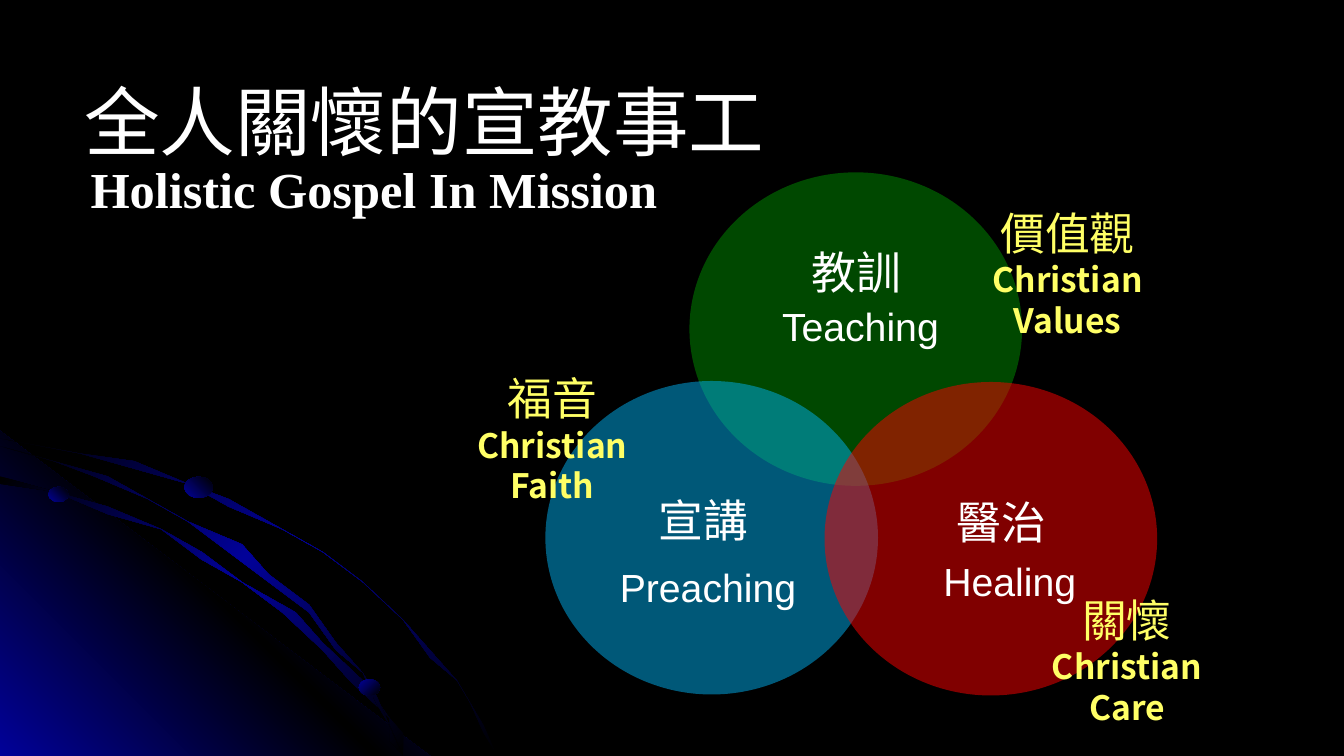
from lxml.etree import SubElement
from pptx import Presentation
from pptx.dml.color import RGBColor
from pptx.enum.shapes import MSO_SHAPE as SHAPE
from pptx.enum.text import MSO_ANCHOR as ANCHOR, MSO_AUTO_SIZE as FIT, PP_ALIGN as ALIGN
from pptx.oxml.ns import qn
from pptx.util import Inches, Pt

W, H = Inches(13.333), Inches(7.5)
CJK = "Noto Sans CJK SC"
BLACK, NAVY, WHITE, YELLOW = "000000", "010199", "FFFFFF", "FFFF66"
TITLE = dict(name=CJK, size=Pt(54), bold=False)
SUBTITLE = dict(name="Times New Roman", size=Pt(36), bold=True)
CHINESE = dict(name=CJK, size=Pt(32))
ENGLISH = dict(name="Arial", size=Pt(28))
VALUE = dict(name=CJK, size=Pt(24), bold=True)

CORNER = [(0, 57), (0, 99.9), (32.2, 99.9)]
ORBITS = [
    [(0, 58), (5.7, 59.6), (9.8, 61.2), (13.7, 63.6), (17.4, 66.3), (20.9, 69.5), (24.2, 73.1),
     (27.2, 77.1), (30, 81.5), (32.5, 86.4), (34, 89.7), (35.2, 93.1), (36.2, 96.4), (37.2, 99.9)],
    [(0, 63.3), (4.1, 65.1), (7.9, 67.3), (11.7, 70.1), (15.2, 73.2), (18.5, 76.8),
     (21.5, 80.8), (24.2, 85.3), (26.6, 90.1), (28.7, 94.9), (29.6, 97.3), (30.3, 99.9)],
    [(0, 58.9), (3.8, 60.7), (7.6, 63.1), (11.2, 65.7), (14.3, 68.8), (17.5, 72.4), (20.4, 76.4),
     (23, 80.4), (25.4, 85.2), (26.9, 88.7), (28.2, 92.4), (29.3, 96), (30.3, 99.9)],
]
PLANETS = [((3.6, 64.4, 1.5, 2), 315), ((26.7, 89.87, 1.58, 2.13), 45),
           ((13.73, 63.07, 2.1, 2.8), 315)]
TOPICS = [
    dict(circle=(51.3, 22.8), color="009900", alpha=47,
         value=("價值觀", "Christian Values"), value_at=(72.38, 30.53),
         chinese="教訓", chinese_at=(59.55, 31.73),
         english="Teaching", english_box=(57.45, 39.33, 13.35, 7.6)),
    dict(circle=(40.58, 50.4), color="00B0F0", alpha=50,
         value=("福音", "Christian Faith"), value_at=(34.05, 52.4),
         chinese="宣講", chinese_at=(48.15, 64.53),
         english="Preaching", english_box=(45.38, 73.87, 14.78, 7.6)),
    dict(circle=(61.35, 50.53), color="FF0000", alpha=50,
         value=("關懷", "Christian Care"), value_at=(76.8, 81.73),
         chinese="醫治", chinese_at=(70.35, 64.8),
         english="Healing", english_box=(69.45, 73.07, 11.55, 7.6)),
]


def rgb(color):
    """Turn a hex string into a colour."""
    return RGBColor.from_string(color)


def share(x, y, w, h):
    """Turn percentages of the slide into left, top, width and height."""
    return [round(v * side / 100) for v, side in ((x, W), (y, H), (w, W), (h, H))]


def plain(sp):
    """Remove the line and shadow of a shape."""
    sp.shadow.inherit = False
    sp.line.fill.background()
    return sp


def gradient(sp, colors, angle):
    """Fill a shape with evenly spaced colours at a clockwise angle."""
    sp.fill.gradient()
    grad = sp._element.spPr.find(qn("a:gradFill"))
    for child in list(grad):
        grad.remove(child)
    stops = SubElement(grad, qn("a:gsLst"))
    for i, color in enumerate(colors):
        pos = 100000 * i // (len(colors) - 1)
        stop = SubElement(stops, qn("a:gs"), pos=str(pos))
        SubElement(stop, qn("a:srgbClr"), val=color)
    SubElement(grad, qn("a:lin"), ang=str(angle * 60000), scaled="0")


def add_outline(s, points, colors, angle):
    """Draw a closed gradient outline through points given as shares."""
    builder = s.shapes.build_freeform(*points[0], scale=(W / 100, H / 100))
    builder.add_line_segments(points[1:], close=True)
    gradient(plain(builder.convert_to_shape()), colors, angle)


def add_orbit(s, edge):
    """Draw a thin band along a curve."""
    inner = [(max(0, x - 0.13), min(99.9, y + 0.3)) for x, y in reversed(edge)]
    add_outline(s, edge + inner, [BLACK, NAVY, BLACK], 45)


def add_ellipse(s, box):
    """Add a plain ellipse."""
    return plain(s.shapes.add_shape(SHAPE.OVAL, *share(*box)))


def add_circle(s, at, color, alpha):
    """Add a translucent circle of the diagram."""
    sp = add_ellipse(s, (*at, 24.75, 41.47))
    sp.fill.solid()
    sp.fill.fore_color.rgb = rgb(color)
    clr = sp._element.spPr.find(qn("a:solidFill"))[0]
    SubElement(clr, qn("a:alpha"), val=str(alpha * 1000))


def write(tf, lines, color, align):
    """Write one paragraph for each text and format pair."""
    for i, (text, style) in enumerate(lines):
        p = tf.add_paragraph() if i else tf.paragraphs[0]
        p.alignment = align
        r = p.add_run()
        r.text = text
        for key, value in style.items():
            setattr(r.font, key, value)
        r.font.color.rgb = rgb(color)
        SubElement(r.font._element, qn("a:ea"), typeface=style["name"])


def add_text(s, box, lines, color=WHITE, align=ALIGN.LEFT, anchor=ANCHOR.TOP):
    """Add an unwrapped text box."""
    tf = s.shapes.add_textbox(*share(*box)).text_frame
    tf.word_wrap = False
    tf.vertical_anchor = anchor
    write(tf, lines, color, align)


def add_title(s, text, box):
    """Place and format the title placeholder."""
    sp = s.shapes.title
    sp.left, sp.top, sp.width, sp.height = share(*box)
    tf = sp.text_frame
    tf.auto_size = FIT.NONE
    tf.vertical_anchor = ANCHOR.MIDDLE
    write(tf, [(text, TITLE)], WHITE, ALIGN.CENTER)
    tf.paragraphs[0].line_spacing = 1.5


def add_backdrop(s):
    """Draw the glowing corner with its orbits and planets."""
    s.background.fill.solid()
    s.background.fill.fore_color.rgb = rgb(BLACK)
    add_outline(s, CORNER, [NAVY, BLACK, NAVY], 315)
    for edge in ORBITS:
        add_orbit(s, edge)
    for box, angle in PLANETS:
        gradient(add_ellipse(s, box), [NAVY, BLACK], angle)


def add_topic(s, topic):
    """Add a circle with its two names and its value."""
    add_circle(s, topic["circle"], topic["color"], topic["alpha"])
    add_text(s, (*topic["value_at"], 14.1, 11.07), zip(topic["value"], (CHINESE, VALUE)),
             YELLOW, ALIGN.CENTER, ANCHOR.MIDDLE)
    add_text(s, (*topic["chinese_at"], 8.25, 8.53), [(topic["chinese"], CHINESE)],
             align=ALIGN.RIGHT)
    add_text(s, topic["english_box"], [(topic["english"], ENGLISH)])


def main():
    """Build and save the slide."""
    prs = Presentation()
    prs.slide_width, prs.slide_height = W, H
    s = prs.slides.add_slide(prs.slide_layouts[5])
    add_backdrop(s)
    for topic in TOPICS:
        add_topic(s, topic)
    add_title(s, "全人關懷的宣教事工", (0, 1.2, 63.15, 23.33))
    add_text(s, (6, 20.27, 44.1, 9.47), [("Holistic Gospel In Mission", SUBTITLE)])
    prs.save("out.pptx")


if __name__ == "__main__":
    main()
